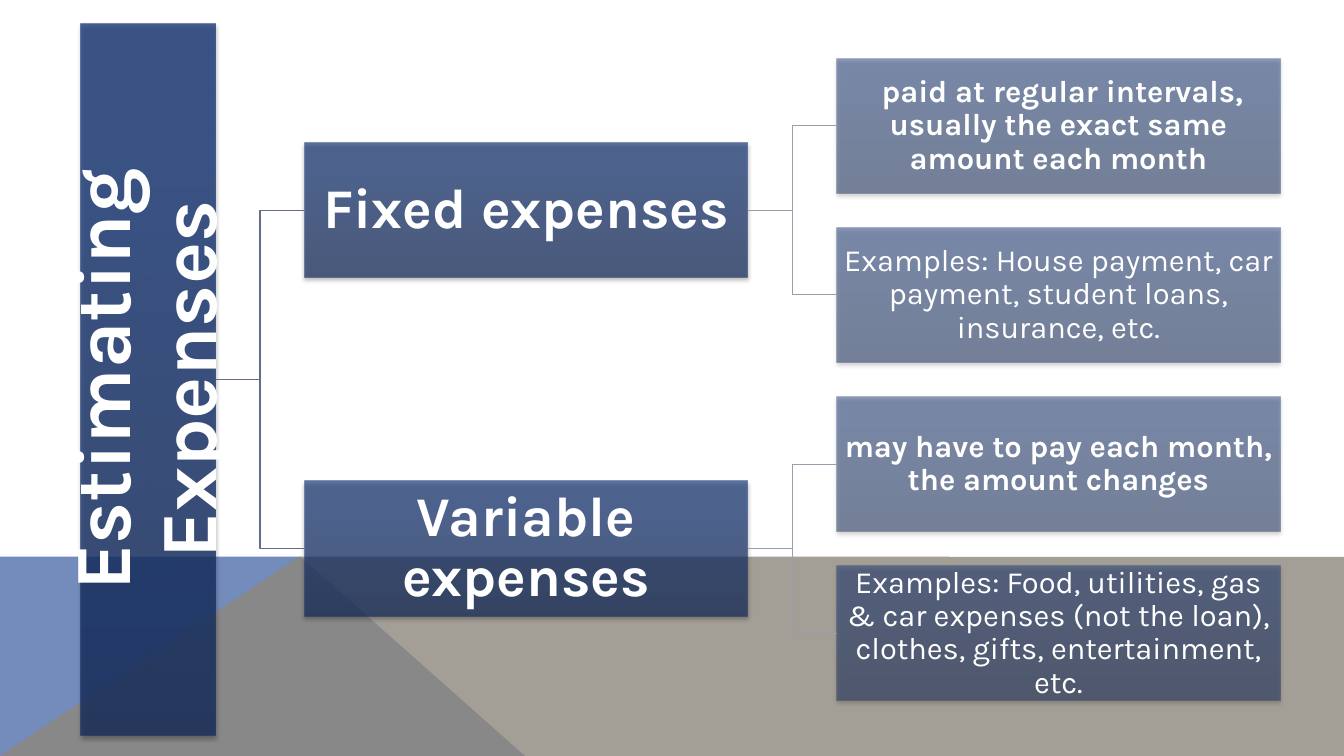
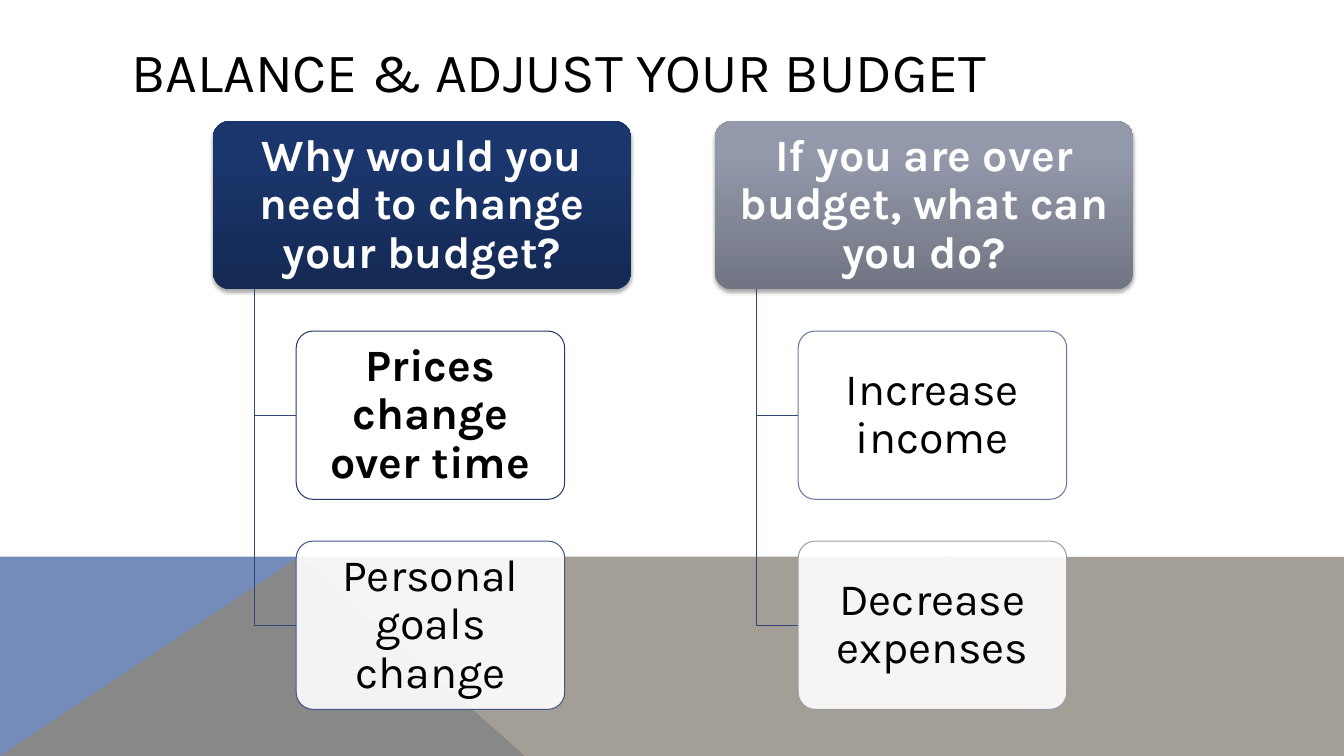
"""Build two budgeting slides: an expense tree and a pair of budget questions."""
from lxml.etree import SubElement
from pptx import Presentation
from pptx.dml.color import RGBColor
from pptx.enum.shapes import MSO_CONNECTOR as Connector, MSO_SHAPE as Shape
from pptx.enum.text import MSO_ANCHOR as Anchor, MSO_AUTO_SIZE as AutoSize, PP_ALIGN as Align
from pptx.oxml.ns import qn
from pptx.util import Pt

FONT = "Karla"
COLORS = {
    "white": "FFFFFF", "black": "000000",
    "band_blue": "748CBC", "band_brown": "8E887C",
    "tree_dark": "172E5C", "tree_light": "1D3B78",
    "root_line": "636C89", "leaf_line": "999EAD",
    "navy_dark": "142A54", "navy_light": "1B366D",
    "gray_dark": "717583", "gray_light": "9398AA",
    "trunk": "334774",
    "edge_navy": "253B67", "edge_blue": "425788",
    "edge_lilac": "6977A0", "edge_gray": "9A9EAD",
}
RGB = {name: RGBColor.from_string(value) for name, value in COLORS.items()}


def add_box(slide, text, *, at, kind=Shape.RECTANGLE, fill, alpha=100, edge=None,
            color="white", size=32, bold=False, inset=(2, 2), upward=False):
    place = [Pt(value) for value in at]
    box = slide.shapes.add_shape(kind, *place)
    if kind == Shape.ROUNDED_RECTANGLE:
        box.adjustments[0] = 0.1
    if len(fill) == 2:
        box.fill.gradient()
        box.fill.gradient_angle = 90
        for stop, name, position in zip(box.fill.gradient_stops, fill, (0, 0.8)):
            stop.color.rgb = RGB[name]
            stop.position = position
    else:
        box.fill.solid()
        box.fill.fore_color.rgb = RGB[fill[0]]
    for tint in box._element.spPr.iter(qn("a:srgbClr")):
        SubElement(tint, qn("a:alpha"), val=str(alpha * 1000))
    box.shadow.inherit = False
    label = box
    if edge:
        box.line.color.rgb = RGB[edge]
        box.line.width = Pt(0.75)
    else:
        box.line.fill.background()
        effects = box._element.spPr.find(qn("a:effectLst"))
        shadow = SubElement(effects, qn("a:outerShdw"), blurRad=str(Pt(3.1)),
                            dist=str(Pt(1.8)), dir="5400000", rotWithShape="0")
        tint = SubElement(shadow, qn("a:srgbClr"), val=COLORS["black"])
        SubElement(tint, qn("a:alpha"), val="35000")
        if alpha < 100:
            label = slide.shapes.add_textbox(*place)
    frame = label.text_frame
    frame.word_wrap = True
    frame.vertical_anchor = Anchor.MIDDLE
    frame.margin_left = frame.margin_right = Pt(inset[0])
    frame.margin_top = frame.margin_bottom = Pt(inset[1])
    if upward:
        frame._txBody.bodyPr.set("vert", "vert270")
    para = frame.paragraphs[0]
    para.alignment = Align.CENTER
    para.line_spacing = 0.9
    span = para.add_run()
    span.text = text
    span.font.name, span.font.size, span.font.bold = FONT, Pt(size), bold
    span.font.color.rgb = RGB[color]
    return box


def add_elbow(slide, color, source, target):
    elbow = slide.shapes.add_connector(Connector.ELBOW, 0, 0, 0, 0)
    elbow.begin_connect(source, 3)
    elbow.end_connect(target, 1)
    elbow.line.color.rgb = RGB[color]
    elbow.line.width = Pt(0.75)
    SubElement(elbow._element.spPr, qn("a:effectLst"))


deck = Presentation()
deck.slide_width, deck.slide_height = Pt(960), Pt(540)
tree_slide = deck.slides.add_slide(deck.slide_layouts[6])
budget_slide = deck.slides.add_slide(deck.slide_layouts[5])

bands = [
    ("band_blue", 100, [(0, 540), (0, 397.5), (214.5, 397.5), (375, 540)]),
    ("band_brown", 80, [(0, 540), (214, 397.5), (960, 397.8), (960, 540)]),
]
master_tree = deck.slide_master.shapes._spTree
for index, (color, alpha, corners) in enumerate(bands):
    points = [(Pt(x), Pt(y)) for x, y in corners]
    outline = tree_slide.shapes.build_freeform(*points[0])
    outline.add_line_segments(points[1:], close=True)
    band = outline.convert_to_shape()
    band.fill.solid()
    band.fill.fore_color.rgb = RGB[color]
    for tint in band._element.spPr.iter(qn("a:srgbClr")):
        SubElement(tint, qn("a:alpha"), val=str(alpha * 1000))
    band.line.fill.background()
    band.shadow.inherit = False
    master_tree.insert(2 + index, band._element)

branches = [
    ("Fixed expenses", [
        (" paid at regular intervals, usually the exact same amount each month", True),
        ("Examples: House payment, car payment, student loans, insurance, etc.", False),
    ]),
    ("Variable expenses", [
        ("may have to pay each month, the amount changes", True),
        ("Examples: Food, utilities, gas & car expenses (not the loan), clothes, "
         "gifts, entertainment, etc.", False),
    ]),
]
TREE_FILL = ("tree_dark", "tree_light")
BOX_WIDTH, BOX_HEIGHT, LEAF_TOP, LEAF_PITCH = 316.8, 96.6, 41.6, 120.8
BRANCH_LEFT, LEAF_LEFT = 217.4, 597.6

root = add_box(tree_slide, "Estimating Expenses", at=(57.5, 16.9, BOX_HEIGHT, 508.4),
               fill=TREE_FILL, alpha=80, size=57, bold=True, inset=(3, 3), upward=True)
for row, (name, leaves) in enumerate(branches):
    first_top = LEAF_TOP + 2 * row * LEAF_PITCH
    branch = add_box(tree_slide, name,
                     at=(BRANCH_LEFT, first_top + LEAF_PITCH / 2, BOX_WIDTH, BOX_HEIGHT),
                     fill=TREE_FILL, alpha=70, size=40, bold=True)
    add_elbow(tree_slide, "root_line", root, branch)
    for step, (text, bold) in enumerate(leaves):
        leaf = add_box(tree_slide, text,
                       at=(LEAF_LEFT, first_top + step * LEAF_PITCH, BOX_WIDTH, BOX_HEIGHT),
                       fill=TREE_FILL, alpha=50, size=22, bold=bold, inset=(1.4, 1.4))
        add_elbow(tree_slide, "leaf_line", branch, leaf)

title = budget_slide.shapes.title
title.left, title.top, title.width, title.height = Pt(86.4), Pt(28.8), Pt(790), Pt(43.2)
title.text_frame.auto_size = AutoSize.NONE
title.text_frame.vertical_anchor = Anchor.MIDDLE
para = title.text_frame.paragraphs[0]
para.alignment = Align.LEFT
span = para.add_run()
span.text = "BALANCE & ADJUST YOUR BUDGET"
span.font.name, span.font.size = FONT, Pt(39.6)
span.font.color.rgb = RGB["black"]

questions = [
    (152, "Why would you need to change your budget?", ("navy_dark", "navy_light"), [
        ("Prices change over time", True, "edge_navy"),
        ("Personal goals change", False, "edge_blue"),
    ]),
    (510.6, "If you are over budget, what can you do?", ("gray_dark", "gray_light"), [
        ("Increase income", False, "edge_lilac"),
        ("Decrease expenses", False, "edge_gray"),
    ]),
]
HEAD_TOP, CARD_HEIGHT, CARD_PITCH, INDENT = 86.5, 120.2, 150, 29.8
ROUNDED = {"kind": Shape.ROUNDED_RECTANGLE, "inset": (5, 3)}

for left, question, fill, answers in questions:
    add_box(budget_slide, question, at=(left, HEAD_TOP, 299, CARD_HEIGHT),
            fill=fill, bold=True, **ROUNDED)
    trunk = left + INDENT
    for step, (text, bold, edge) in enumerate(answers, start=1):
        top = HEAD_TOP + step * CARD_PITCH
        middle = top + CARD_HEIGHT / 2
        outline = budget_slide.shapes.build_freeform(Pt(trunk), Pt(HEAD_TOP + CARD_HEIGHT))
        outline.add_line_segments([(Pt(trunk), Pt(middle)), (Pt(trunk + INDENT), Pt(middle))],
                                  close=False)
        bracket = outline.convert_to_shape()
        bracket.fill.background()
        bracket.line.color.rgb = RGB["trunk"]
        bracket.line.width = Pt(0.75)
        bracket.shadow.inherit = False
        add_box(budget_slide, text, at=(trunk + INDENT, top, 191.8, CARD_HEIGHT),
                fill=("white",), alpha=90, edge=edge, color="black", bold=bold, **ROUNDED)

deck.save("out.pptx")
